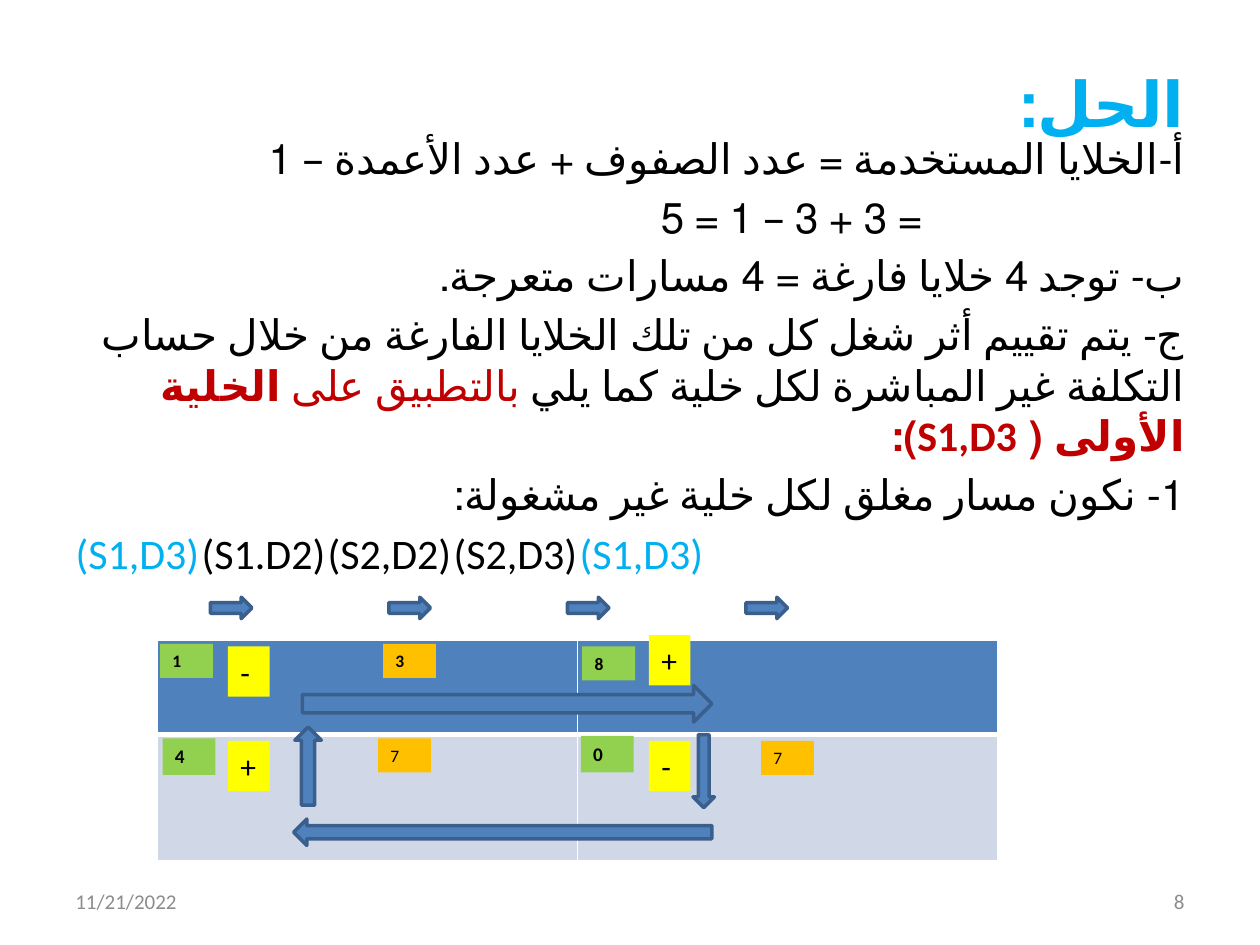
from dataclasses import dataclass

from pptx import Presentation
from pptx.dml.color import RGBColor
from pptx.enum.lang import MSO_LANGUAGE_ID as Lang
from pptx.enum.shapes import MSO_SHAPE as Shape
from pptx.enum.text import MSO_ANCHOR as Anchor, MSO_AUTO_SIZE as AutoSize, PP_ALIGN as Align
from pptx.oxml.xmlchemy import OxmlElement
from pptx.util import Inches, Pt


@dataclass(frozen=True)
class Theme:
    font: str = "Calibri"
    black: str = "000000"
    white: str = "FFFFFF"
    cyan: str = "00B0F0"
    red: str = "C00000"
    grey: str = "8C8C8C"
    blue: str = "4F81BD"
    outline: str = "3A5F8C"
    pale: str = "D0D8E8"
    green: str = "92D050"
    orange: str = "FFC000"
    yellow: str = "FFFF00"
    title: int = 36
    body: int = 24
    sign: int = 18
    footer: int = 12
    stock: int = 11
    cost: int = 10


class Deck:
    def __init__(self, theme):
        self.theme = theme
        self.prs = Presentation()
        self.prs.slide_width, self.prs.slide_height = Inches(10), Inches(7.5)
        self.slide = self.prs.slides.add_slide(self.prs.slide_layouts[1])

    def place(self, s, box):
        s.left, s.top, s.width, s.height = map(Inches, box)

    def run(self, p, text, size, color, bold=False, lang=Lang.ENGLISH_US):
        r = p.add_run()
        r.text = text
        f = r.font
        f.name, f.size, f.bold, f.language_id = self.theme.font, Pt(size), bold, lang
        f.color.rgb = RGBColor.from_string(color)

    def rtl(self, p):
        p.alignment = Align.RIGHT
        p._p.get_or_add_pPr().set("rtl", "1")

    def title(self, text, box):
        s = self.slide.shapes.title
        self.place(s, box)
        tf = s.text_frame
        tf.vertical_anchor = Anchor.MIDDLE
        p = tf.paragraphs[0]
        self.rtl(p)
        self.run(p, text, self.theme.title, self.theme.cyan, True, Lang.ARABIC)

    def body(self, paragraphs, box):
        s = self.slide.placeholders[1]
        self.place(s, box)
        tf = s.text_frame
        tf.auto_size = AutoSize.NONE
        for i, (indent, tabs, runs) in enumerate(paragraphs):
            p = tf.paragraphs[0] if i == 0 else tf.add_paragraph()
            pPr = p._p.get_or_add_pPr()
            pPr.set("marL", str(Inches(indent)))
            pPr.set("indent", "0")
            pPr.append(OxmlElement("a:buNone"))
            if tabs:
                tab_list = OxmlElement("a:tabLst")
                for pos in tabs:
                    tab = OxmlElement("a:tab")
                    tab.set("pos", str(Inches(pos)))
                    tab.set("algn", "l")
                    tab_list.append(tab)
                pPr.append(tab_list)
            else:
                self.rtl(p)
            if i == 0:
                p.space_before = Pt(0)
            lang = Lang.ENGLISH_US if tabs else Lang.ARABIC
            for text, color, bold in runs:
                self.run(p, text, self.theme.body, color, bold, lang)

    def label(self, text, box, size, color, bold=False, fill=None,
              align=Align.LEFT, anchor=Anchor.TOP):
        s = self.slide.shapes.add_textbox(*map(Inches, box))
        if fill:
            s.fill.solid()
            s.fill.fore_color.rgb = RGBColor.from_string(fill)
        tf = s.text_frame
        tf.word_wrap = True
        tf.vertical_anchor = anchor
        p = tf.paragraphs[0]
        p.alignment = align
        self.run(p, text, size, color, bold)

    def arrow(self, kind, box):
        s = self.slide.shapes.add_shape(kind, *map(Inches, box))
        s.shadow.inherit = False
        s.fill.solid()
        s.fill.fore_color.rgb = RGBColor.from_string(self.theme.blue)
        s.line.color.rgb = RGBColor.from_string(self.theme.outline)
        s.line.width = Pt(2)

    def border(self, cell, side, width):
        ln = OxmlElement(f"a:{side}")
        ln.set("w", str(Pt(width)))
        fill = OxmlElement("a:solidFill")
        color = OxmlElement("a:srgbClr")
        color.set("val", self.theme.white)
        fill.append(color)
        ln.append(fill)
        cell._tc.get_or_add_tcPr().insert(0, ln)

    def table(self, box, heights, fills, rules, cols):
        t = self.slide.shapes.add_table(len(heights), cols, *map(Inches, box)).table
        for row, height, fill, (top, bottom) in zip(t.rows, heights, fills, rules):
            row.height = Inches(height)
            for cell in row.cells:
                cell.fill.solid()
                cell.fill.fore_color.rgb = RGBColor.from_string(fill)
                self.border(cell, "lnB", bottom)
                self.border(cell, "lnT", top)


def main():
    th = Theme()
    deck = Deck(th)
    deck.title("الحل:", (0.5, 0.33, 9, 0.97))

    def plain(text):
        return [(text, th.black, False)]

    deck.body([
        (0, (), plain("أ-الخلايا المستخدمة = عدد الصفوف + عدد الأعمدة – 1")),
        (2.08, (), plain("= 3 + 3 – 1 = 5")),
        (0, (), plain("ب- توجد 4 خلايا فارغة = 4 مسارات متعرجة.")),
        (0, (), plain("ج- يتم تقييم أثر شغل كل من تلك الخلايا الفارغة من خلال "
                      "حساب التكلفة غير المباشرة لكل خلية كما يلي ")
         + [("بالتطبيق على ", th.red, False),
            ("الخلية الأولى ( S1,D3):", th.red, True)]),
        (0, (), plain("1- نكون مسار مغلق لكل خلية غير مشغولة:")),
        (0, (1.58, 3.08, 4.59, 6.09), [
            ("(S1,D3)", th.cyan, False),
            ("\t(S1.D2)\t(S2,D2)\t(S2,D3)", th.black, False),
            ("\t(S1,D3)", th.cyan, False)]),
    ], (0.5, 1, 9, 6))

    for text, left, align in (("11/21/2022", 0.5, Align.LEFT), ("8", 7.17, Align.RIGHT)):
        deck.label(text, (left, 6.95, 2.33, 0.4), th.footer, th.grey,
                   align=align, anchor=Anchor.MIDDLE)

    for i in range(4):
        deck.arrow(Shape.RIGHT_ARROW, (1.67 + i * 1.417, 4.74, 0.33, 0.17))

    deck.table((1.25, 5.08, 6.67, 1.75), (0.75, 1), (th.blue, th.pale),
               ((1, 3), (3, 1)), 2)

    for text, left, top, fill, bold in (
        ("1", 1.27, 5.11, th.green, True),
        ("3", 3.04, 5.11, th.orange, True),
        ("7", 6.04, 5.88, th.orange, False),
        ("7", 3, 5.86, th.orange, False),
        ("8", 4.62, 5.13, th.green, True),
    ):
        deck.label(text, (left, top, 0.42, 0.27), th.cost, th.black, bold, fill)

    for text, left, top in (("0", 4.61, 5.84), ("4", 1.29, 5.86)):
        deck.label(text, (left, top, 0.42, 0.29), th.stock, th.black, True, th.green)

    for kind, box in (
        (Shape.DOWN_ARROW, (5.5, 5.83, 0.17, 0.58)),
        (Shape.RIGHT_ARROW, (2.4, 5.44, 3.25, 0.29)),
        (Shape.UP_ARROW, (2.34, 5.77, 0.21, 0.62)),
        (Shape.LEFT_ARROW, (2.33, 6.5, 3.32, 0.21)),
    ):
        deck.arrow(kind, box)

    for text, left, top in (("+", 1.81, 5.88), ("-", 1.81, 5.13),
                            ("+", 5.15, 5.04), ("-", 5.15, 5.88)):
        deck.label(text, (left, top, 0.33, 0.4), th.sign, th.black, fill=th.yellow)

    deck.prs.save("out.pptx")


if __name__ == "__main__":
    main()
